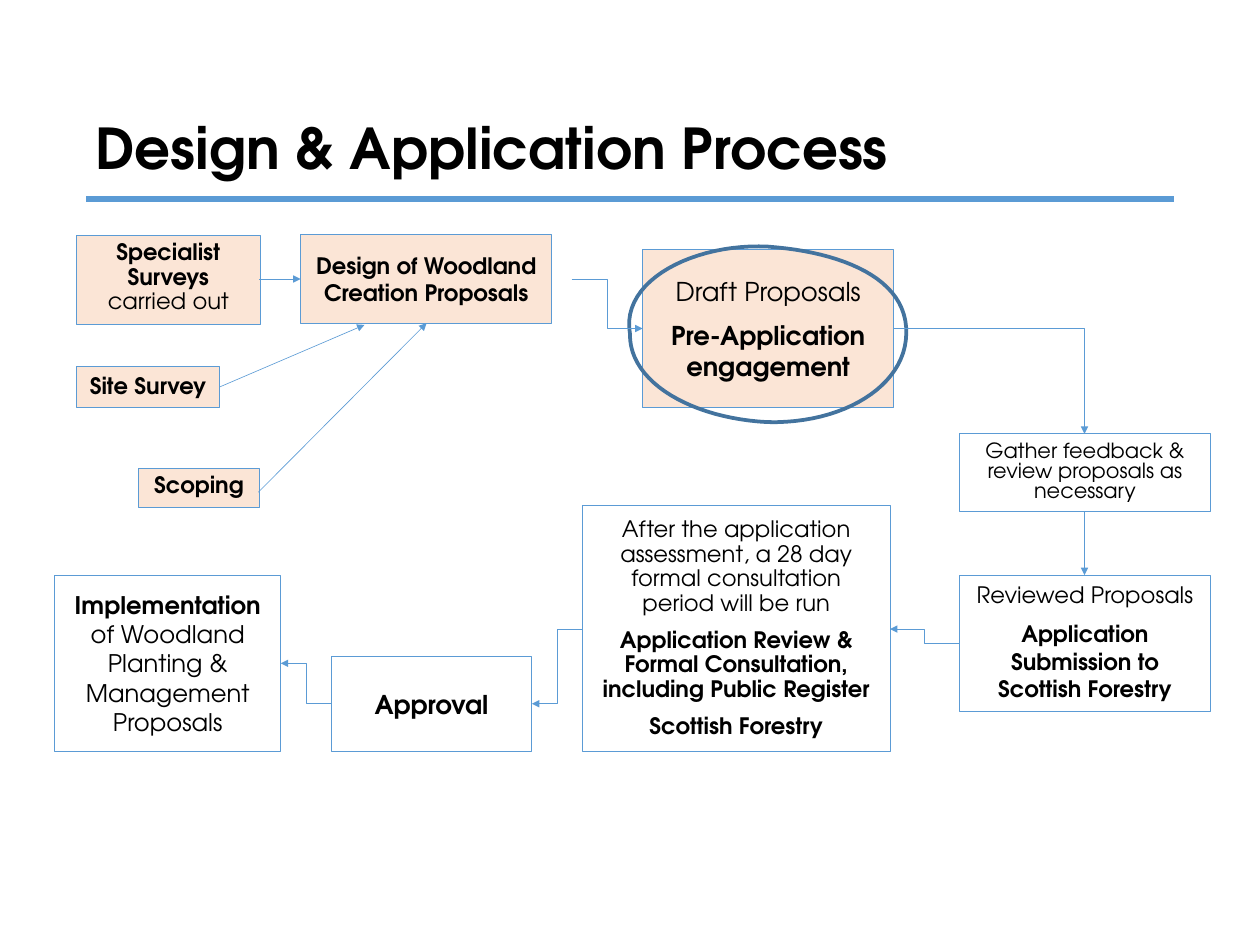
import pptx
import pptx.util
import pptx.dml.color
import pptx.enum.shapes
import pptx.enum.text
import pptx.oxml.ns
import lxml.etree

Inches = pptx.util.Inches
Pt = pptx.util.Pt
ANCHOR = pptx.enum.text.MSO_ANCHOR
ALIGN = pptx.enum.text.PP_ALIGN
CONNECTOR = pptx.enum.shapes.MSO_CONNECTOR
qn = pptx.oxml.ns.qn

THEME = {
    "font": "TeX Gyre Adventor",
    "text": "000000", "accent": "5B9BD5", "highlight": "43739E", "done": "FBE5D6",
    "title": 45, "large": 20.7, "medium": 19.4, "normal": 18.1, "small": 16.7,
    "rule": 4.5, "ring": 3, "border": 0.75, "arrow": 0.5,
}

TITLE = "Design & Application Process"
TITLE_BOX = (0.96, 1.07, 10.74, 1.22)
RULE = ((0.96, 2.21), (13.04, 2.21))

DESIGN = {"at": (3.34, 2.61, 2.79, 0.98), "size": "normal", "done": True, "anchor": ANCHOR.MIDDLE,
          "text": [[("Design of Woodland Creation Proposals", True)]]}

STEPS = [
    {"at": (0.61, 6.39, 2.51, 1.96), "size": "medium", "anchor": ANCHOR.MIDDLE,
     "text": [[("Implementation ", True),
               ("of Woodland Planting & Management Proposals", False)]]},
    {"at": (7.14, 2.77, 2.79, 1.76), "size": "large", "done": True, "anchor": ANCHOR.MIDDLE,
     "text": [[("Draft Proposals", False)], [("Pre-Application engagement", True)]]},
    {"at": (10.66, 6.39, 2.79, 1.52), "size": "normal",
     "text": [[("Reviewed Proposals", False)],
              [("Application Submission to Scottish Forestry", True)]]},
    {"at": (6.47, 5.62, 3.42, 2.73), "size": "normal", "spacing": 0.9, "anchor": ANCHOR.MIDDLE,
     "text": [[("After the application assessment, a 28 day formal consultation period will be run",
                False)],
              [("Application Review & Formal Consultation, including Public Register", True)],
              [("Scottish Forestry", True)]]},
    {"at": (3.68, 7.29, 2.23, 1.06), "size": "large", "anchor": ANCHOR.MIDDLE,
     "text": [[("Approval", True)]]},
    {"at": (0.85, 2.62, 2.04, 0.98), "size": "normal", "done": True, "spacing": 0.9,
     "text": [[("Specialist Surveys ", True), ("carried out", False)]]},
    {"at": (10.66, 4.82, 2.79, 0.86), "size": "small", "spacing": 0.8, "anchor": ANCHOR.MIDDLE,
     "text": [[("Gather feedback & review proposals as necessary", False)]]},
    {"at": (0.85, 4.07, 1.59, 0.46), "size": "normal", "done": True,
     "text": [[("Site Survey", True)]]},
    {"at": (1.54, 5.21, 1.34, 0.43), "size": "normal", "done": True, "spacing": 0.9,
     "text": [[("Scoping", True)]]},
]

RING_START = (7, 3.71)
RING_CURVES = [
    ((6.89, 3.1), (7.74, 2.7), (8.53, 2.74)),
    ((9.35, 2.8), (10.09, 3.09), (10.07, 3.71)),
    ((10.06, 4.29), (9.37, 4.71), (8.53, 4.69)),
    ((7.71, 4.65), (6.99, 4.26), RING_START),
]
RING_STEPS = 24

ARROWS = [
    ("line", (2.88, 3.1), (3.34, 3.1)),
    ("line", (12.05, 5.68), (12.05, 6.39)),
    ("line", (2.44, 4.3), (4.05, 3.61)),
    ("line", (2.87, 5.47), (4.74, 3.59)),
    ("bentConnector3", (6.35, 3.1), (7.14, 3.65)),
    ("bentConnector2", (9.93, 3.65), (12.05, 4.82)),
    ("bentConnector3", (10.66, 7.15), (9.89, 6.99)),
    ("bentConnector3", (6.47, 6.99), (5.91, 7.82)),
    ("bentConnector3", (3.68, 7.82), (3.12, 7.37)),
]


def color(name):
    return pptx.dml.color.RGBColor.from_string(THEME[name])


def place(shape, at):
    shape.left, shape.top, shape.width, shape.height = map(Inches, at)


def style_line(line, color_name, width_name):
    line.color.rgb = color(color_name)
    line.width = Pt(THEME[width_name])


def style_font(font, size_name, bold):
    font.name = THEME["font"]
    font.size = Pt(THEME[size_name])
    font.bold = bold
    font.color.rgb = color("text")


def fill_step(shape, step):
    if step.get("done"):
        shape.fill.solid()
        shape.fill.fore_color.rgb = color("done")
    else:
        shape.fill.background()
    style_line(shape.line, "accent", "border")
    frame = shape.text_frame
    frame.word_wrap = True
    frame.auto_size = pptx.enum.text.MSO_AUTO_SIZE.NONE
    frame.vertical_anchor = step.get("anchor", ANCHOR.TOP)
    for index, parts in enumerate(step["text"]):
        paragraph = frame.add_paragraph() if index else frame.paragraphs[0]
        properties = paragraph._p.get_or_add_pPr()
        properties.set("marL", "0")
        properties.set("indent", "0")
        lxml.etree.SubElement(properties, qn("a:buNone"))
        paragraph.alignment = ALIGN.CENTER
        paragraph.line_spacing = step.get("spacing", 1.0)
        paragraph.space_before = Pt(10 if index else 0)
        for words, bold in parts:
            run = paragraph.add_run()
            run.text = words
            style_font(run.font, step["size"], bold)


def add_step(slide, step):
    shape = slide.shapes.add_shape(pptx.enum.shapes.MSO_SHAPE.RECTANGLE, *map(Inches, step["at"]))
    shape.shadow.inherit = False
    frame = shape.text_frame
    frame.margin_left = frame.margin_right = Inches(0.13)
    frame.margin_top = frame.margin_bottom = Inches(0.06)
    fill_step(shape, step)


def add_line(slide, start, end, width_name, geometry="line"):
    kind = CONNECTOR.STRAIGHT if geometry == "line" else CONNECTOR.ELBOW
    connector = slide.shapes.add_connector(kind, *map(Inches, start + end))
    properties = connector._element.spPr
    properties.find(qn("a:prstGeom")).set("prst", geometry)
    style_line(connector.line, "accent", width_name)
    lxml.etree.SubElement(properties, qn("a:effectLst"))
    return connector


def add_arrow(slide, geometry, start, end):
    connector = add_line(slide, start, end, "arrow", geometry)
    outline = connector._element.spPr.find(qn("a:ln"))
    lxml.etree.SubElement(outline, qn("a:tailEnd"), type="triangle")


def add_ring(slide):
    points, begin = [], RING_START
    for first, second, end in RING_CURVES:
        for step in range(1, RING_STEPS + 1):
            t = step / RING_STEPS
            u = 1 - t
            points.append(tuple(
                Inches(u**3 * a + 3 * u * u * t * b + 3 * u * t * t * c + t**3 * d)
                for a, b, c, d in zip(begin, first, second, end)))
        begin = end
    builder = slide.shapes.build_freeform(*map(Inches, RING_START))
    builder.add_line_segments(points, close=True)
    ring = builder.convert_to_shape()
    ring.shadow.inherit = False
    ring.fill.background()
    style_line(ring.line, "highlight", "ring")


def main():
    deck = pptx.Presentation()
    deck.slide_width, deck.slide_height = Inches(14), Inches(10.5)
    slide = deck.slides.add_slide(deck.slide_layouts[1])

    title = slide.shapes.title
    place(title, TITLE_BOX)
    title.text_frame.text = TITLE
    title.text_frame.vertical_anchor = ANCHOR.MIDDLE
    heading = title.text_frame.paragraphs[0]
    heading.alignment = ALIGN.LEFT
    heading.line_spacing = 0.9
    style_font(heading.runs[0].font, "title", True)

    design = slide.placeholders[1]
    place(design, DESIGN["at"])
    fill_step(design, DESIGN)

    for step in STEPS:
        add_step(slide, step)
    add_ring(slide)
    add_line(slide, *RULE, "rule")
    for arrow in ARROWS:
        add_arrow(slide, *arrow)
    deck.save("out.pptx")


if __name__ == "__main__":
    main()
